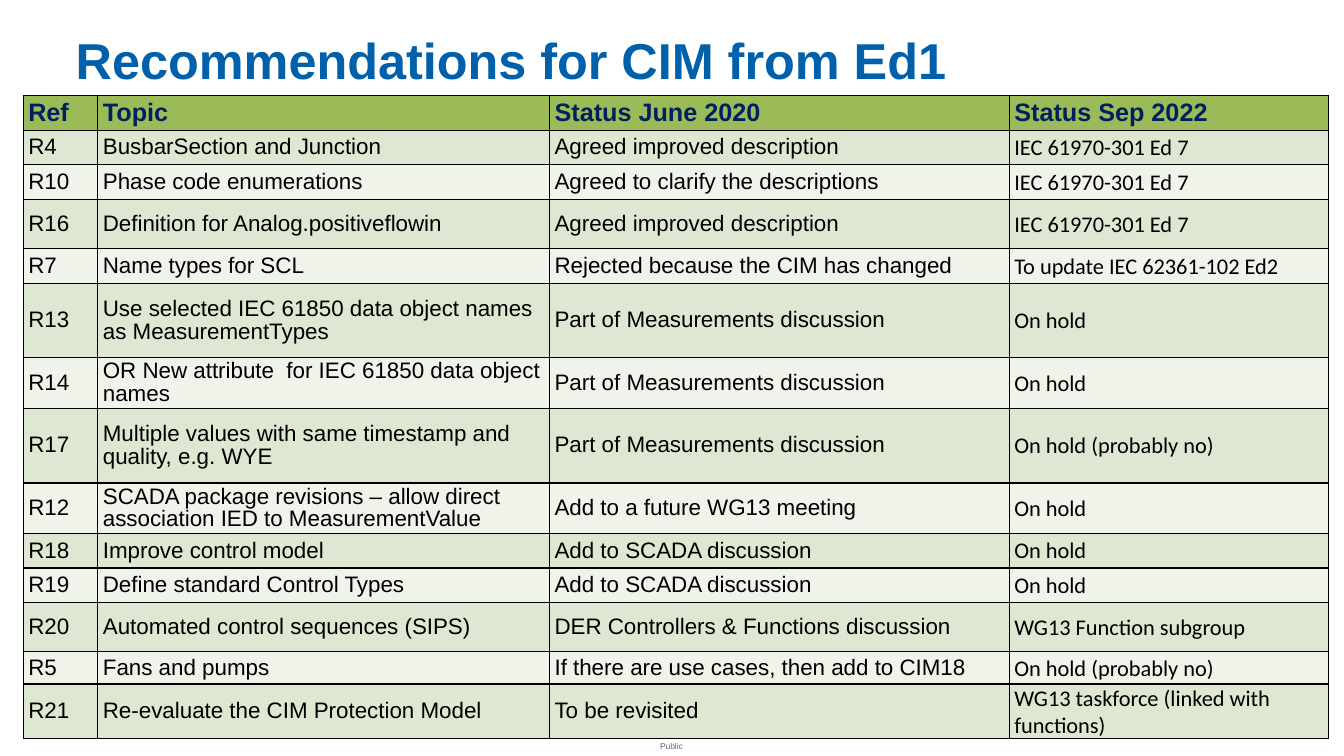
from dataclasses import dataclass
from itertools import cycle
from typing import NamedTuple

from lxml.etree import SubElement
from pptx import Presentation
from pptx.dml.color import RGBColor as RGB
from pptx.enum.text import MSO_ANCHOR as Anchor, MSO_AUTO_SIZE as Fit, PP_ALIGN as Align
from pptx.oxml.ns import qn
from pptx.util import Inches, Length, Pt


@dataclass(frozen=True)
class Theme:
    sans: str = "Arial"
    alt: str = "Calibri"
    title: str = "0060A9"
    head: str = "002060"
    body: str = "000000"
    foot: str = "626469"
    line: str = "000000"
    top: str = "9BBB59"
    bands: tuple[str, str] = ("DEE7D1", "EFF3EA")
    title_size: int = 36
    head_size: int = 18
    body_size: int = 16
    foot_size: int = 6
    leading: float = 0.92


class Box(NamedTuple):
    """Left, top, width and height in percent of the slide."""
    left: float
    top: float
    width: float
    height: float


class Item(NamedTuple):
    """One table row; high is in percent of the slide's height."""
    high: float
    ref: str
    topic: str
    before: str
    now: str


THEME = Theme()
WIDE, HIGH = Inches(13.33), Inches(7.5)
TITLE = Box(4.88, 2.8, 93.47, 10)
TABLE = Box(1.73, 12.67, 97.15, 86.27)
FOOT = Box(48.31, 97.33, 3.3, 2.67)
COLS = (5.55, 33.61, 34.21, 23.78)
SLIM, MID, TALL = 4.57, 6.53, 9.87
EDITION = "IEC 61970-301 Ed 7"
AGREED = "Agreed improved description"
MEASURE = "Part of Measurements discussion"
SCADA = "Add to SCADA discussion"
HOLD = "On hold"
DOUBT = "On hold (probably no)"

HEAD = Item(SLIM, "Ref", "Topic", "Status June 2020", "Status Sep 2022")
ITEMS = (
    Item(SLIM, "R4", "BusbarSection and Junction", AGREED, EDITION),
    Item(SLIM, "R10", "Phase code enumerations", "Agreed to clarify the descriptions", EDITION),
    Item(MID, "R16", "Definition for Analog.positiveflowin", AGREED, EDITION),
    Item(SLIM, "R7", "Name types for SCL", "Rejected because the CIM has changed",
         "To update IEC 62361-102 Ed2"),
    Item(TALL, "R13", "Use selected IEC 61850 data object names as MeasurementTypes",
         MEASURE, HOLD),
    Item(MID, "R14", "OR New attribute  for IEC 61850 data object names", MEASURE, HOLD),
    Item(TALL, "R17", "Multiple values with same timestamp and quality, e.g. WYE",
         MEASURE, DOUBT),
    Item(MID, "R12", "SCADA package revisions – allow direct association IED to MeasurementValue",
         "Add to a future WG13 meeting", HOLD),
    Item(SLIM, "R18", "Improve control model", SCADA, HOLD),
    Item(SLIM, "R19", "Define standard Control Types", SCADA, HOLD),
    Item(MID, "R20", "Automated control sequences (SIPS)",
         "DER Controllers & Functions discussion", "WG13 Function subgroup"),
    Item(4.27, "R5", "Fans and pumps", "If there are use cases, then add to CIM18", DOUBT),
    Item(MID, "R21", "Re-evaluate the CIM Protection Model", "To be revisited",
         "WG13 taskforce (linked with functions)"),
)


def across(share: float) -> Length:
    return Length(round(WIDE * share / 100))


def down(share: float) -> Length:
    return Length(round(HIGH * share / 100))


def frame(box: Box) -> tuple[Length, Length, Length, Length]:
    return across(box.left), down(box.top), across(box.width), down(box.height)


def style(para, face: str, size: int, color: str, bold: bool = False) -> None:
    font = para.font
    font.name, font.size, font.bold = face, Pt(size), bold
    font.color.rgb = RGB.from_string(color)


def border(cell) -> None:
    props = cell._tc.get_or_add_tcPr()
    for spot, side in enumerate(("lnL", "lnR", "lnT", "lnB")):
        line = SubElement(props, qn(f"a:{side}"), w=str(Pt(1)))
        fill = SubElement(line, qn("a:solidFill"))
        SubElement(fill, qn("a:srgbClr"), val=THEME.line)
        props.insert(spot, line)


def put_cell(cell, text: str, face: str, fill: str, head: bool) -> None:
    cell.text = text
    cell.vertical_anchor = Anchor.MIDDLE
    cell.margin_left = cell.margin_right = cell.margin_top = Inches(0.01)
    cell.margin_bottom = 0
    cell.fill.solid()
    cell.fill.fore_color.rgb = RGB.from_string(fill)
    border(cell)
    para = cell.text_frame.paragraphs[0]
    props = para._p.get_or_add_pPr()
    props.set("marL", str(Inches(0.04)))
    props.set("indent", "0")
    para.space_after = Pt(6)
    if head:
        style(para, face, THEME.head_size, THEME.head, True)
    else:
        style(para, face, THEME.body_size, THEME.body)
    if face == THEME.sans:
        para.line_spacing = THEME.leading


def put_row(table, index: int, item: Item, fill: str) -> None:
    head = item is HEAD
    table.rows[index].height = down(item.high)
    for col, text in enumerate(item[1:]):
        last = col == len(COLS) - 1
        face = THEME.alt if last and not head else THEME.sans
        put_cell(table.cell(index, col), text, face, fill, head)


def put_table(slide) -> None:
    table = slide.shapes.add_table(len(ITEMS) + 1, len(COLS), *frame(TABLE)).table
    table.horz_banding = False
    for col, share in zip(table.columns, COLS):
        col.width = across(share)
    put_row(table, 0, HEAD, THEME.top)
    for index, (item, fill) in enumerate(zip(ITEMS, cycle(THEME.bands)), 1):
        put_row(table, index, item, fill)


def put_title(slide) -> None:
    title = slide.shapes.title
    title.left, title.top, title.width, title.height = frame(TITLE)
    text = title.text_frame
    text.text = "Recommendations for CIM from Ed1"
    text.vertical_anchor = Anchor.MIDDLE
    text.auto_size = Fit.NONE
    para = text.paragraphs[0]
    para.alignment = Align.LEFT
    style(para, THEME.sans, THEME.title_size, THEME.title, True)


def put_foot(slide) -> None:
    text = slide.shapes.add_textbox(*frame(FOOT)).text_frame
    text.text = "Public"
    text.word_wrap = True
    text.vertical_anchor = Anchor.MIDDLE
    text.margin_left = text.margin_right = text.margin_top = text.margin_bottom = 0
    para = text.paragraphs[0]
    para.alignment = Align.CENTER
    style(para, THEME.sans, THEME.foot_size, THEME.foot)


def main() -> None:
    deck = Presentation()
    deck.slide_width, deck.slide_height = WIDE, HIGH
    slide = deck.slides.add_slide(deck.slide_layouts.get_by_name("Title Only"))
    put_foot(slide)
    put_title(slide)
    put_table(slide)
    deck.save("out.pptx")


if __name__ == "__main__":
    main()
